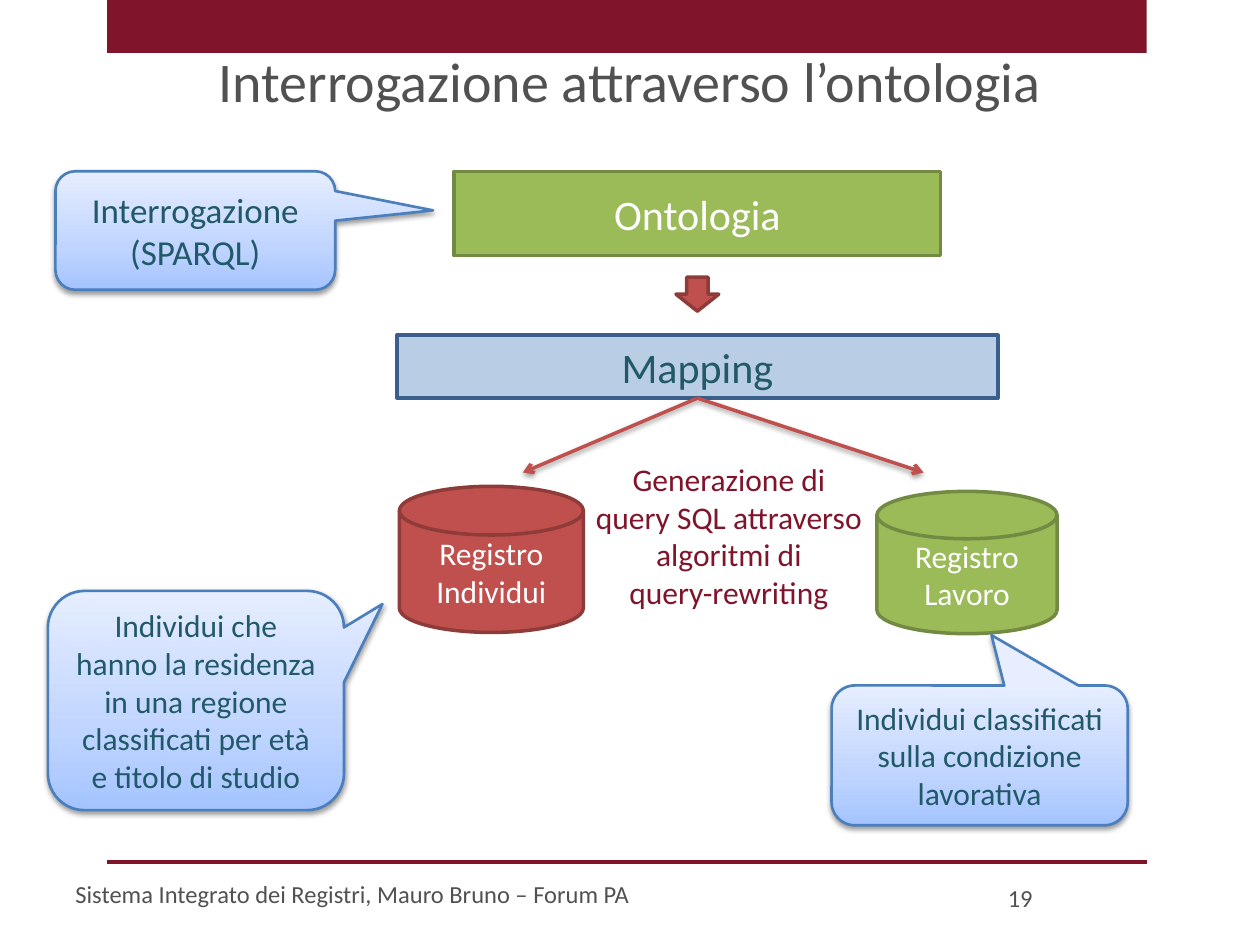
from lxml import etree
from pptx import Presentation
from pptx import util as u
from pptx.dml.color import RGBColor
from pptx.enum import shapes, text
from pptx.oxml import parse_xml
from pptx.oxml.ns import nsdecls, qn

MAROON = RGBColor(0x7F, 0x14, 0x2A)
GREY = RGBColor(0x50, 0x51, 0x50)
GREEN = RGBColor(0x9B, 0xBB, 0x59)
DARK_GREEN = RGBColor(0x73, 0x8A, 0x42)
RED = RGBColor(0xC0, 0x50, 0x4D)
DARK_RED = RGBColor(0x8E, 0x3B, 0x39)
PALE_BLUE = RGBColor(0xB9, 0xCD, 0xE5)
NAVY = RGBColor(0x3A, 0x5F, 0x8C)
BLUE = RGBColor(0x4B, 0x7E, 0xBC)
TEAL = RGBColor(0x21, 0x59, 0x68)
WHITE = RGBColor(0xFF, 0xFF, 0xFF)
BLACK = RGBColor(0, 0, 0)
CALLOUT_STOPS = (
    (0, RGBColor(0xA4, 0xC4, 0xFF)),
    (35, RGBColor(0xBF, 0xD4, 0xFF)),
    (100, RGBColor(0xE6, 0xEE, 0xFF)),
)
SHAPE = shapes.MSO_SHAPE
CENTER = text.PP_ALIGN.CENTER
MIDDLE = text.MSO_ANCHOR.MIDDLE
TOP = text.MSO_ANCHOR.TOP


def inches(values):
    return [u.Inches(v) for v in values]


def write(sp, words, size, color, align=CENTER, anchor=TOP):
    tf = sp.text_frame
    for name, value in {"word_wrap": True, "vertical_anchor": anchor,
                        "auto_size": text.MSO_AUTO_SIZE.NONE}.items():
        setattr(tf, name, value)
    tf.text = words
    p = tf.paragraphs[0]
    p.alignment = align
    for r in p.runs:
        for name, value in {"name": "Calibri", "size": u.Pt(size)}.items():
            setattr(r.font, name, value)
        r.font.color.rgb = color


def add_label(slide, box, words, size, color, align=CENTER):
    write(slide.shapes.add_textbox(*inches(box)), words, size, color, align)


def add_box(slide, kind, box, fill, line=None, words="", size=18, color=WHITE, width=2):
    sp = slide.shapes.add_shape(kind, *inches(box))
    sp.shadow.inherit = False
    sp.fill.solid()
    sp.fill.fore_color.rgb = fill
    if line is None:
        sp.line.fill.background()
    else:
        sp.line.color.rgb = line
        sp.line.width = u.Pt(width)
    if words:
        write(sp, words, size, color, anchor=MIDDLE)
    return sp


def add_shadow(effects):
    effects.append(parse_xml(
        f'<a:outerShdw {nsdecls("a")} blurRad="{u.Pt(3.1)}" dist="{u.Pt(1.6)}" '
        f'dir="5400000" rotWithShape="0"><a:srgbClr val="{BLACK}">'
        '<a:alpha val="38000"/></a:srgbClr></a:outerShdw>'))


def add_callout(slide, box, tip, words, size=18):
    sp = add_box(slide, SHAPE.ROUNDED_RECTANGULAR_CALLOUT, box, WHITE, BLUE,
                 words, size, TEAL, 1.5)
    for i, value in enumerate((*tip, 0.167)):
        sp.adjustments[i] = value
    # Three-stop gradient, lightest at the top
    sp.fill.gradient()
    sp.fill.gradient_angle = 90
    sp_pr = sp._element.spPr
    stops = sp_pr.find(qn("a:gradFill")).find(qn("a:gsLst"))
    for stop in list(stops):
        stops.remove(stop)
    for position, rgb in CALLOUT_STOPS:
        stops.append(parse_xml(f'<a:gs {nsdecls("a")} pos="{position * 1000}">'
                               f'<a:srgbClr val="{rgb}"/></a:gs>'))
    add_shadow(sp_pr.find(qn("a:effectLst")))


def add_line(slide, start, end, color, arrow=False):
    line = slide.shapes.add_connector(shapes.MSO_CONNECTOR.STRAIGHT, *inches(start + end))
    line.line.color.rgb = color
    line.line.width = u.Pt(2)
    sp_pr = line._element.spPr
    effects = etree.SubElement(sp_pr, qn("a:effectLst"))
    if arrow:
        etree.SubElement(sp_pr.find(qn("a:ln")), qn("a:tailEnd"), type="arrow")
        add_shadow(effects)
    return line


def add_frame(slide, left, width):
    # Top bar and footer rule
    add_box(slide, SHAPE.RECTANGLE, (left, 0, width, 0.42), MAROON)
    add_line(slide, (left, 6.84), (left + width, 6.84), MAROON)
    # Footer and page number
    add_label(slide, (0.5, 6.93, 6.46, 0.4),
              "Sistema Integrato dei Registri, Mauro Bruno – Forum PA", 14, GREY,
              text.PP_ALIGN.LEFT)
    add_label(slide, (7.9, 6.96, 0.71, 0.4), "19", 14, GREY, text.PP_ALIGN.LEFT)


def add_title(slide, box):
    title = slide.shapes.title
    for name, value in zip(("left", "top", "width", "height"), inches(box)):
        setattr(title, name, value)
    write(title, "Interrogazione attraverso l’ontologia", 32, GREY)


def add_flow(slide, left, top, width):
    middle = left + width / 2
    # Ontology, down arrow and mapping share one axis
    add_box(slide, SHAPE.FLOWCHART_PROCESS, (middle - 1.93, top, 3.86, 0.67),
            GREEN, DARK_GREEN, "Ontologia", 24)
    add_box(slide, SHAPE.DOWN_ARROW, (middle - 0.17, top + 0.84, 0.34, 0.27), RED, DARK_RED)
    mapping = add_box(slide, SHAPE.RECTANGLE, (left, top + 1.3, width, 0.5),
                      PALE_BLUE, NAVY, "Mapping", 24, TEAL)
    # Arrows from mapping to the registers
    for x in (4.15, 7.33):
        arrow = add_line(slide, (middle, top + 1.8), (x, top + 2.39), RED, arrow=True)
        arrow.begin_connect(mapping, 2)
    add_label(slide, (4.61, top + 2.24, 2.35, 1.31),
              "Generazione di query SQL attraverso algoritmi di\vquery-rewriting", 18, MAROON)
    # Registers
    for box, fill, line, words in (
        ((3.17, top + 2.5, 1.46, 1.16), RED, DARK_RED, "Registro Individui"),
        ((6.96, top + 2.54, 1.43, 1.13), GREEN, DARK_GREEN, "Registro Lavoro"),
    ):
        add_box(slide, SHAPE.FLOWCHART_MAGNETIC_DISK, box, fill, line, words)


def main():
    prs = Presentation()
    prs.slide_width, prs.slide_height = inches((10, 7.5))
    slide = prs.slides.add_slide(prs.slide_layouts[5])
    add_frame(slide, 0.85, 8.25)
    add_title(slide, (0.5, 0.32, 9, 1.25))
    add_flow(slide, 3.15, 1.36, 4.77)
    # Callouts
    add_callout(slide, (6.6, 5.44, 2.35, 1.11), (0.04, -0.86),
                "Individui classificati sulla condizione lavorativa")
    add_callout(slide, (0.38, 4.69, 2.35, 1.74), (0.63, -0.44),
                "Individui che hanno la residenza in una regione "
                "classificati per età e titolo di studio")
    add_callout(slide, (0.44, 1.36, 2.22, 0.94), (0.85, -0.17),
                "Interrogazione (SPARQL)", 20)
    prs.save("out.pptx")


if __name__ == "__main__":
    main()
